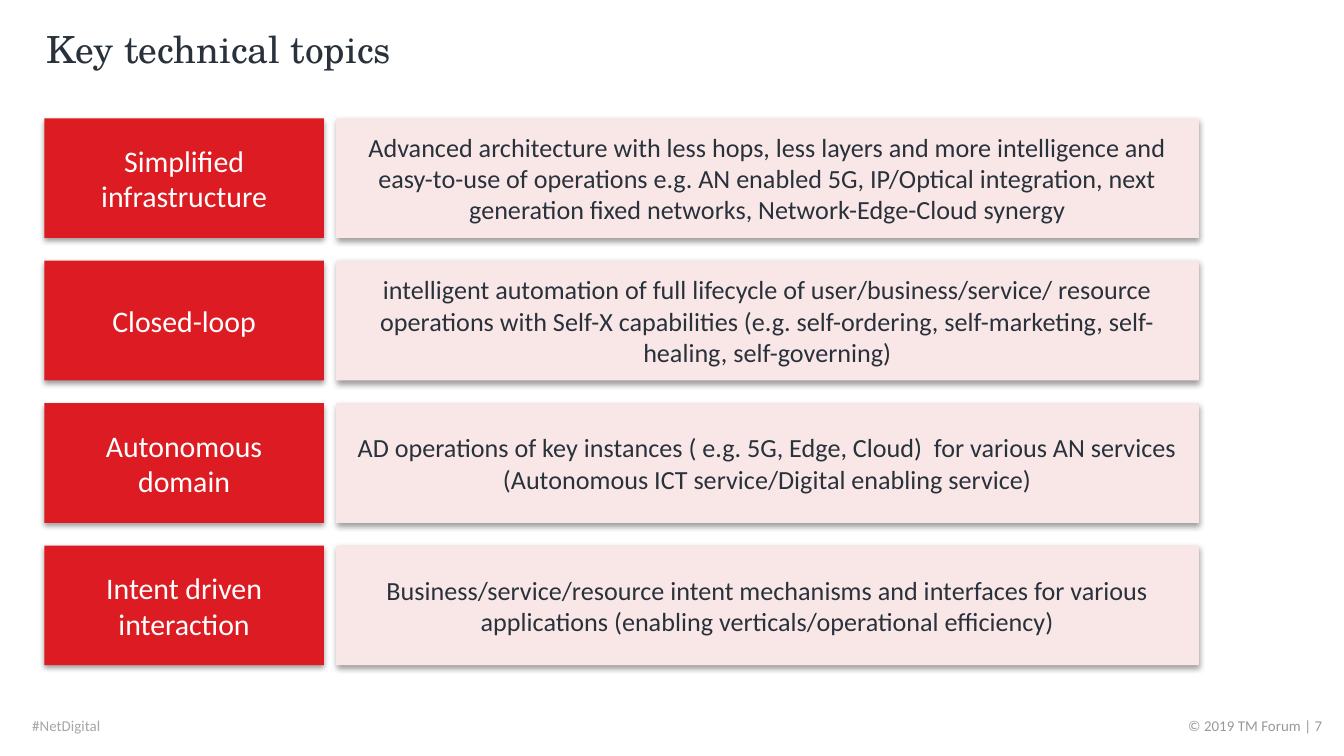
from dataclasses import dataclass

from lxml.etree import SubElement
from pptx import Presentation
from pptx.dml.color import RGBColor
from pptx.enum.shapes import MSO_SHAPE
from pptx.enum.text import MSO_ANCHOR as Anchor, PP_ALIGN as Align
from pptx.oxml.ns import qn
from pptx.shapes.autoshape import Shape
from pptx.slide import Slide
from pptx.util import Inches, Pt

RED = RGBColor(0xDC, 0x1C, 0x22)
PINK = RGBColor(0xF9, 0xE7, 0xE7)
DARK = RGBColor(0x29, 0x31, 0x3B)
WHITE = RGBColor(0xFF, 0xFF, 0xFF)
FOOTER_GRAY = RGBColor(0x99, 0x99, 0x99)
TAG_GRAY = RGBColor(0xA6, 0xA6, 0xA6)

BODY_FONT = "Calibri"
TITLE_FONT = "TeX Gyre Schola"
ROW_TOP, ROW_STEP, ROW_HEIGHT = 0.88, 1.06, 0.89


@dataclass(frozen=True)
class Topic:
    name: str
    description: str


@dataclass(frozen=True)
class Column:
    left: float
    width: float
    fill: RGBColor
    text_color: RGBColor
    size: int


NAME_COLUMN = Column(0.33, 2.08, RED, WHITE, 16)
DESCRIPTION_COLUMN = Column(2.5, 6.42, PINK, DARK, 14)

TOPICS = [
    Topic(
        "Simplified infrastructure",
        "Advanced architecture with less hops, less layers and more intelligence and "
        "easy-to-use of operations e.g. AN enabled 5G, IP/Optical integration, next "
        "generation fixed networks, Network-Edge-Cloud synergy",
    ),
    Topic(
        "Closed-loop",
        "intelligent automation of full lifecycle of user/business/service/ resource "
        "operations with Self-X capabilities (e.g. self-ordering, self-marketing, "
        "self-healing, self-governing)",
    ),
    Topic(
        "Autonomous domain",
        "AD operations of key instances ( e.g. 5G, Edge, Cloud)  for various AN services "
        "(Autonomous ICT service/Digital enabling service)",
    ),
    Topic(
        "Intent driven interaction",
        "Business/service/resource intent mechanisms and interfaces for various "
        "applications (enabling verticals/operational efficiency)",
    ),
]


def write_text(shape: Shape, text: str, font_name: str, size: int,
               color: RGBColor, align: Align) -> None:
    """Put one formatted paragraph in a shape, centred vertically."""
    frame = shape.text_frame
    frame.word_wrap = True
    frame.vertical_anchor = Anchor.MIDDLE
    frame.text = text
    paragraph = frame.paragraphs[0]
    paragraph.alignment = align
    font = paragraph.runs[0].font
    font.name = font_name
    font.size = Pt(size)
    font.color.rgb = color


def add_shadow(shape: Shape) -> None:
    """Give a shape a soft shadow below it."""
    shape.shadow.inherit = False
    effects = shape.element.spPr.find(qn("a:effectLst"))
    shadow = SubElement(effects, qn("a:outerShdw"), blurRad=str(Pt(3.1)),
                        dist=str(Pt(1.6)), dir="5400000", algn="t", rotWithShape="0")
    color = SubElement(shadow, qn("a:srgbClr"), val="000000")
    SubElement(color, qn("a:alpha"), val="38000")


def add_cell(slide: Slide, column: Column, top: float, text: str) -> None:
    """Draw one shadowed box of a topic row."""
    shape = slide.shapes.add_shape(
        MSO_SHAPE.RECTANGLE, Inches(column.left), Inches(top),
        Inches(column.width), Inches(ROW_HEIGHT))
    shape.fill.solid()
    shape.fill.fore_color.rgb = column.fill
    shape.line.fill.background()
    add_shadow(shape)
    write_text(shape, text, BODY_FONT, column.size, column.text_color, Align.CENTER)


def add_footer(slide: Slide, left: float, text: str, color: RGBColor, align: Align) -> None:
    """Draw one small footer text."""
    box = slide.shapes.add_textbox(Inches(left), Inches(5.31), Inches(2.17), Inches(0.15))
    write_text(box, text, BODY_FONT, 8, color, align)
    frame = box.text_frame
    frame.vertical_anchor = Anchor.TOP
    frame.margin_left = Inches(0.07)
    frame.margin_top = Inches(0.02)
    frame.margin_right = frame.margin_bottom = Inches(0)


def main() -> None:
    """Build the key technical topics slide."""
    presentation = Presentation()
    presentation.slide_width = Inches(10)
    presentation.slide_height = Inches(10 * 9 / 16)
    slide = presentation.slides.add_slide(presentation.slide_layouts[6])

    add_footer(slide, 7.67, "© 2019 TM Forum | 7", FOOTER_GRAY, Align.RIGHT)
    add_footer(slide, 0.17, "#NetDigital", TAG_GRAY, Align.LEFT)

    title = slide.shapes.add_textbox(Inches(0.25), Inches(0.14), Inches(9.45), Inches(0.44))
    write_text(title, "Key technical topics", TITLE_FONT, 20, DARK, Align.LEFT)

    for index, topic in enumerate(TOPICS):
        top = ROW_TOP + index * ROW_STEP
        add_cell(slide, DESCRIPTION_COLUMN, top, topic.description)
        add_cell(slide, NAME_COLUMN, top, topic.name)

    presentation.save("out.pptx")


if __name__ == "__main__":
    main()
